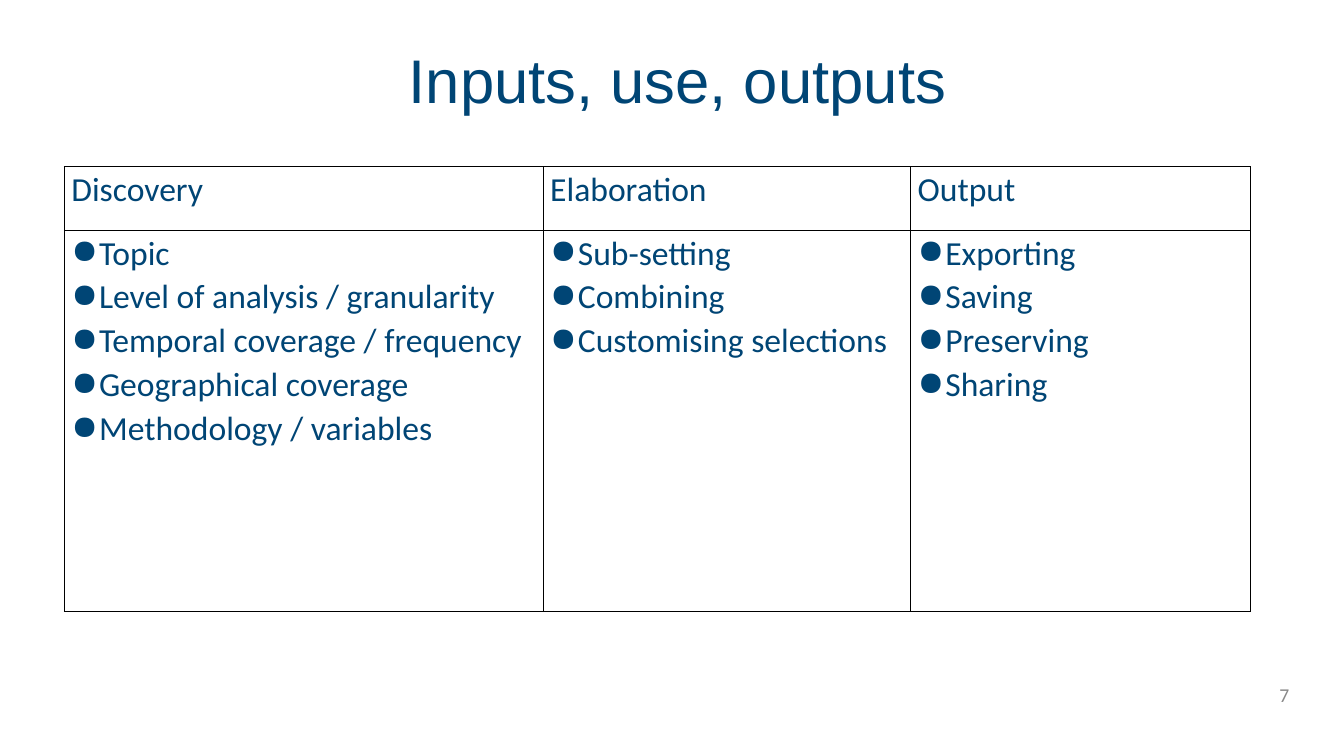
from lxml import etree
from pptx import Presentation
from pptx.dml import color
from pptx.enum import text as t
from pptx.oxml import ns
from pptx.util import Pt

NAVY, GREY, BLACK = "004575", "898989", "000000"
COLS = {
    "Discovery": ["Topic", "Level of analysis / granularity",
                  "Temporal coverage / frequency",
                  "Geographical coverage", "Methodology / variables"],
    "Elaboration": ["Sub-setting", "Combining", "Customising selections"],
    "Output": ["Exporting", "Saving", "Preserving", "Sharing"],
}
WIDTHS = [342, 262.5, 242.5]
HEIGHTS = [45.5, 272.5]


def rgb(code):
    return color.RGBColor.from_string(code)


def node(parent, tag, **attrs):
    return etree.SubElement(parent, ns.qn(tag), attrs)


def write(frame, lines, size=24, font="Calibri", tint=NAVY, space=1.0,
          align=t.PP_ALIGN.LEFT, indent=0):
    for i, line in enumerate(lines):
        para = frame.add_paragraph() if i else frame.paragraphs[0]
        para.alignment = align
        para.line_spacing = space
        para.space_before = para.space_after = Pt(0)
        if indent:
            props = para._p.get_or_add_pPr()
            props.set("marL", str(Pt(indent)))
            props.set("indent", str(-Pt(indent)))
            node(props, "a:buChar", char="●")
        run = para.add_run()
        run.text = line
        run.font.size = Pt(size)
        run.font.name = font
        run.font.bold = False
        run.font.color.rgb = rgb(tint)


def head(slide, left, top, width, height):
    title = slide.shapes.title
    title.left, title.top = Pt(left), Pt(top)
    title.width, title.height = Pt(width), Pt(height)
    frame = title.text_frame
    frame.word_wrap = True
    frame.auto_size = t.MSO_AUTO_SIZE.NONE
    frame.vertical_anchor = t.MSO_ANCHOR.TOP
    frame.margin_left = Pt(101)
    write(frame, ["Inputs, use, outputs"], size=44, font="Arial", space=0.9)


def style(cell):
    cell.margin_left = cell.margin_right = Pt(5)
    cell.margin_top = cell.margin_bottom = Pt(0)
    props = cell._tc.get_or_add_tcPr()
    for side in "LRTB":
        line = node(props, "a:ln" + side, w=str(Pt(1)))
        fill = node(line, "a:solidFill")
        node(fill, "a:srgbClr", val=BLACK)
    cell.fill.background()


def grid(slide, left, top):
    table = slide.shapes.add_table(
        len(HEIGHTS), len(WIDTHS), Pt(left), Pt(top),
        Pt(sum(WIDTHS)), Pt(sum(HEIGHTS))).table
    table.first_row = table.horz_banding = False
    for row, height in zip(table.rows, HEIGHTS):
        row.height = Pt(height)
    for i, (name, items) in enumerate(COLS.items()):
        table.columns[i].width = Pt(WIDTHS[i])
        top_cell, body = table.cell(0, i), table.cell(1, i)
        style(top_cell)
        style(body)
        write(top_cell.text_frame, [name], space=1.07)
        write(body.text_frame, items, space=1.07, indent=19.75)


def foot(slide, left, top, width, height):
    box = slide.shapes.add_textbox(Pt(left), Pt(top), Pt(width), Pt(height))
    frame = box.text_frame
    frame.word_wrap = True
    frame.vertical_anchor = t.MSO_ANCHOR.BOTTOM
    write(frame, ["7"], size=14, tint=GREY, align=t.PP_ALIGN.RIGHT)


def main():
    deck = Presentation()
    deck.slide_width, deck.slide_height = Pt(960), Pt(540)
    slide = deck.slides.add_slide(deck.slide_layouts[5])
    head(slide, 191, 32.5, 612.5, 86.5)
    foot(slide, 893, 479, 35, 29)
    grid(slide, 46, 119)
    deck.save("out.pptx")


if __name__ == "__main__":
    main()
